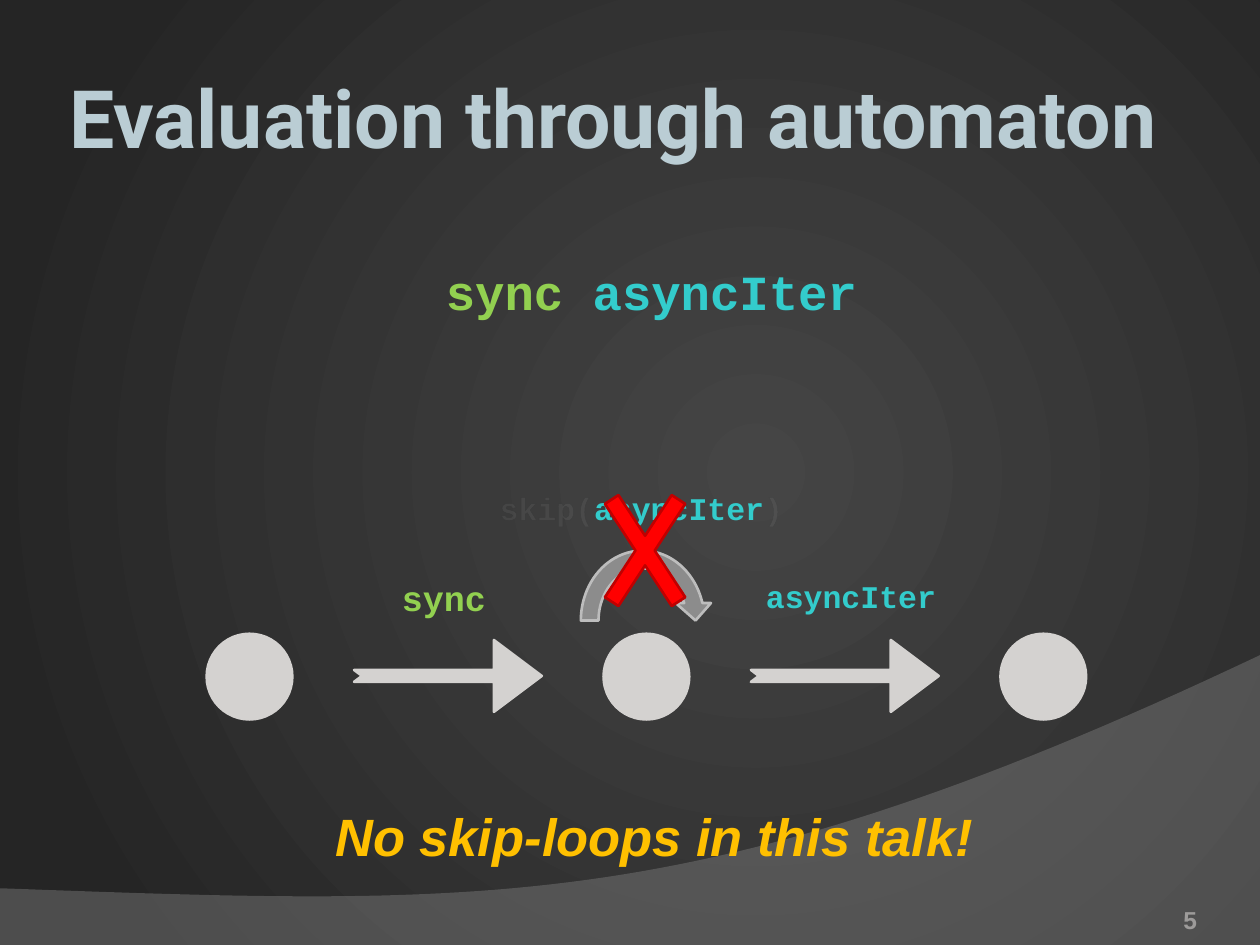
import pptx
import pptx.dml.color
import pptx.enum.shapes
import pptx.enum.text
import pptx.oxml
import pptx.oxml.ns
import pptx.util

Inches = pptx.util.Inches
Shape = pptx.enum.shapes.MSO_SHAPE
Align = pptx.enum.text.PP_ALIGN
Anchor = pptx.enum.text.MSO_ANCHOR
qn = pptx.oxml.ns.qn


class Theme:
    centre, edge, wave = "454545", "252525", "7F7F7F"
    title, number, state = "BACDD4", "9D9B9A", "D4D2D0"
    sync, iterator, plain = "92D050", "33CCCC", "FFFFFF"
    loop, loop_edge = "8C8C8C", "BDBDBD"
    cross, cross_edge = "FF0000", "C00000"
    remark, remark_edge, outline = "FFC000", "F9E98E", "162023"
    heading, formula, closing = 46, 28, 30
    first_label, label, page = 20, 18, 14
    sans, code, display = "Arial", "Courier New", "Roboto"


def add_text(box, runs, size, font, align=Align.LEFT, anchor=Anchor.TOP,
             inset=(0.1, 0.05), wrap=True, italic=None,
             outline=Theme.outline, outline_width=1):
    frame = slide.shapes.add_textbox(*map(Inches, box)).text_frame
    frame.word_wrap = wrap
    frame.vertical_anchor = anchor
    frame.margin_left = frame.margin_right = Inches(inset[0])
    frame.margin_top = frame.margin_bottom = Inches(inset[1])
    line = frame.paragraphs[0]
    line.alignment = align
    for words, colour in runs:
        run = line.add_run()
        run.text = words
        run.font.size = pptx.util.Pt(size)
        run.font.name = font
        run.font.bold = True
        run.font.italic = italic
        run.font.color.rgb = pptx.dml.color.RGBColor.from_string(colour)
        if outline:
            run.font._element.insert(0, pptx.oxml.parse_xml(
                f'<a:ln {pptx.oxml.ns.nsdecls("a")} w="{pptx.util.Pt(outline_width)}">'
                f'<a:solidFill><a:srgbClr val="{outline}"><a:alpha val="6000"/>'
                '</a:srgbClr></a:solidFill></a:ln>'))


def add_figure(preset, box, fill, edge, adjustments=()):
    figure = slide.shapes.add_shape(preset, *map(Inches, box))
    figure.shadow.inherit = False
    figure.fill.solid()
    figure.fill.fore_color.rgb = pptx.dml.color.RGBColor.from_string(fill)
    figure.line.color.rgb = pptx.dml.color.RGBColor.from_string(edge)
    figure.line.width = pptx.util.Pt(1.5)
    for index, value in enumerate(adjustments):
        figure.adjustments[index] = value


deck = pptx.Presentation()
deck.slide_width, deck.slide_height = Inches(10), Inches(7.5)
slide = deck.slides.add_slide(deck.slide_layouts[6])

backdrop = slide.background.fill
backdrop.gradient()
for stop, colour in zip(backdrop.gradient_stops, (Theme.centre, Theme.edge)):
    stop.color.rgb = pptx.dml.color.RGBColor.from_string(colour)
gradient = slide.background._cSld.find(".//" + qn("a:gradFill"))
gradient.replace(gradient.find(qn("a:lin")), pptx.oxml.parse_xml(
    f'<a:path {pptx.oxml.ns.nsdecls("a")} path="circle">'
    '<a:fillToRect l="120000" t="100000" r="100000" b="100000"/></a:path>'))
gradient[:] = [gradient.find(qn("a:gsLst")), gradient.find(qn("a:path"))]

curve = [(10, 5.2), (5.59, 7.29), (3.91, 7.19), (0, 7.05)]
steps = 60
crest = []
for step in range(steps + 1):
    t = step / steps
    weights = ((1 - t) ** 3, 3 * t * (1 - t) ** 2, 3 * t ** 2 * (1 - t), t ** 3)
    crest.append([Inches(sum(w * point[axis] for w, point in zip(weights, curve)))
                  for axis in (0, 1)])
outline = slide.shapes.build_freeform(Inches(0), Inches(7.5))
outline.add_line_segments([(Inches(10), Inches(7.5))] + crest, close=True)
wave = outline.convert_to_shape()
wave.shadow.inherit = False
wave.line.fill.background()
wave.fill.solid()
wave.fill.fore_color.rgb = pptx.dml.color.RGBColor.from_string(Theme.wave)
wave_colour = wave._element.spPr.find(qn("a:solidFill"))[0]
wave_colour.append(pptx.oxml.parse_xml(
    f'<a:alpha {pptx.oxml.ns.nsdecls("a")} val="45000"/>'))

add_text((0.5, 0.3, 9, 1.25), [("Evaluation through automaton", Theme.title)],
         Theme.heading, Theme.display, anchor=Anchor.MIDDLE, inset=(0.05, 0.05))
add_text((8.67, 7.02, 0.83, 0.4), [("5", Theme.number)], Theme.page, Theme.sans,
         Align.RIGHT, Anchor.BOTTOM, inset=(0, 0), outline=None)

pitch = 3.15
for state in range(3):
    add_figure(Shape.OVAL, (1.64 + state * pitch, 5.03, 0.68, 0.68),
               Theme.state, Theme.state)
for step in range(2):
    add_figure(Shape.NOTCHED_RIGHT_ARROW, (2.81 + step * pitch, 5.08, 1.49, 0.57),
               Theme.state, Theme.state, (0.167, 0.667))

add_text((3.09, 4.53, 1.51, 0.44), [("sync", Theme.sync)],
         Theme.first_label, Theme.code)
add_text((5.98, 4.53, 1.91, 0.4), [("asyncIter", Theme.iterator)],
         Theme.label, Theme.code)
add_figure(Shape.CIRCULAR_ARROW, (4.54, 4.3, 1.12, 1.25), Theme.loop,
           Theme.loop_edge, (0.125, 11.423, 204.577, 108, 0.125))

add_text((3.44, 2.03, 3.49, 0.57),
         [("sync ", Theme.sync), ("asyncIter", Theme.iterator)],
         Theme.formula, Theme.code, wrap=False)
add_text((3.52, 3.83, 3.14, 0.4),
         [("skip(", Theme.plain), ("asyncIter", Theme.iterator), (")", Theme.plain)],
         Theme.label, Theme.code, Align.CENTER)
add_figure(Shape.MATH_MULTIPLY, (4.61, 3.59, 1.02, 1.56),
           Theme.cross, Theme.cross_edge, (0.126,))
add_text((2.03, 6.33, 6.33, 0.61), [("No skip-loops in this talk!", Theme.remark)],
         Theme.closing, Theme.sans, Align.CENTER, italic=True,
         outline=Theme.remark_edge, outline_width=2.25)

deck.save("out.pptx")
